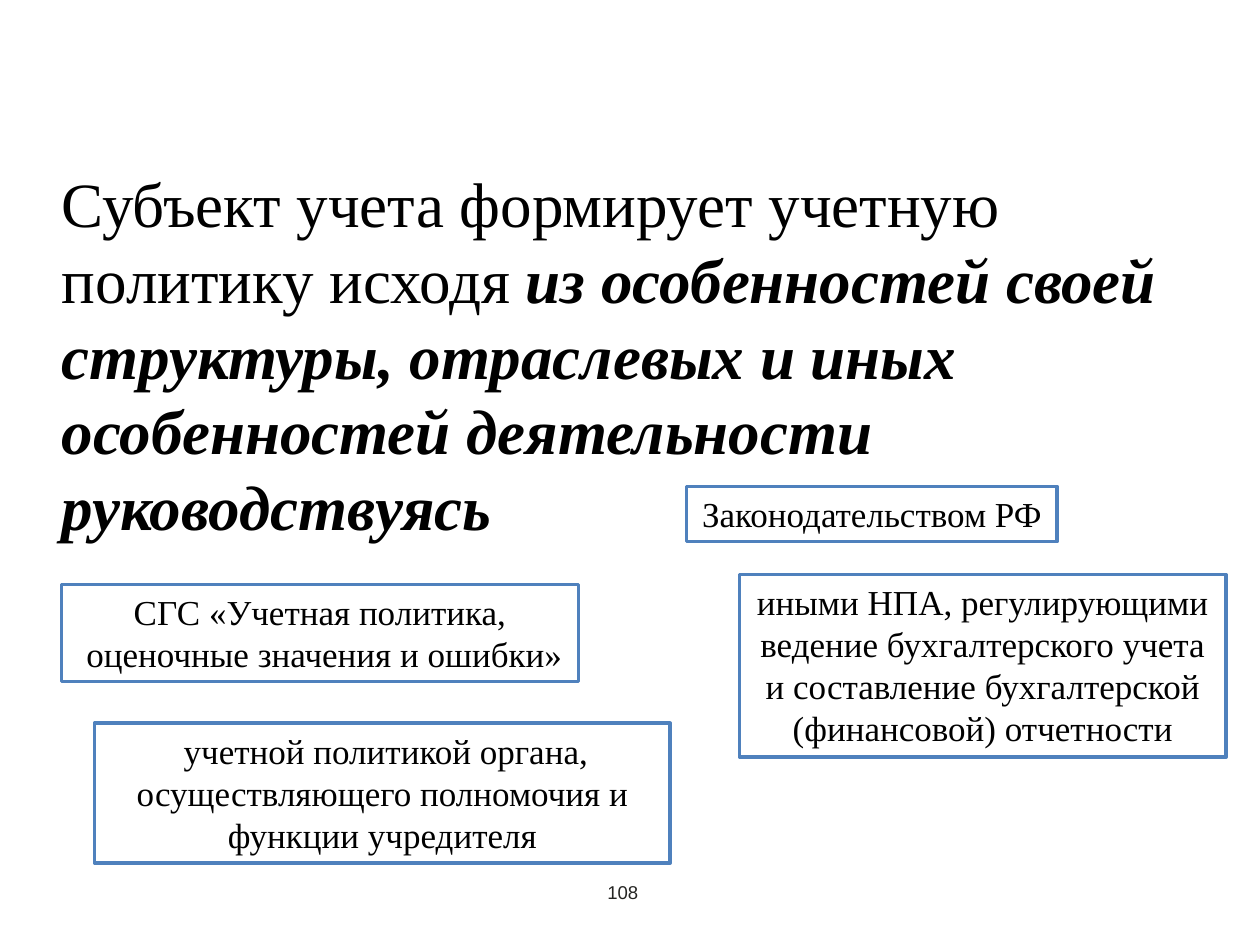
from pptx import Presentation
from pptx.dml.color import RGBColor
from pptx.enum.shapes import MSO_SHAPE
from pptx.enum.text import MSO_ANCHOR, MSO_AUTO_SIZE, PP_ALIGN
from pptx.util import Inches, Pt

RECTANGLE = MSO_SHAPE.RECTANGLE
TOP = MSO_ANCHOR.TOP
GROW = MSO_AUTO_SIZE.SHAPE_TO_FIT_TEXT
CENTER, LEFT = PP_ALIGN.CENTER, PP_ALIGN.LEFT

BLACK = RGBColor(0x00, 0x00, 0x00)
WHITE = RGBColor(0xFF, 0xFF, 0xFF)
BLUE = RGBColor(0x4F, 0x81, 0xBD)
DARK_GRAY = RGBColor(0x25, 0x25, 0x23)

SERIF = {"name": "Times New Roman", "color": BLACK}
PLAIN = {**SERIF, "size": Pt(36)}
EMPHASIS = {**PLAIN, "bold": True, "italic": True}
SMALL = {**SERIF, "size": Pt(16)}
BOX_TEXT = {**SERIF, "size": Pt(20)}
PAGE_TEXT = {"name": "Arial", "color": DARK_GRAY, "size": Pt(10.6)}


def add_run(paragraph, text, style):
    run = paragraph.add_run()
    run.text = text
    for attribute, value in style.items():
        if attribute == "color":
            run.font.color.rgb = value
        else:
            setattr(run.font, attribute, value)


def set_frame(shape, margin=None, wrap=True):
    frame = shape.text_frame
    settings = {"word_wrap": wrap, "auto_size": GROW, "vertical_anchor": TOP}
    if margin is not None:
        for side in ("left", "top", "right", "bottom"):
            settings[f"margin_{side}"] = margin
    for attribute, value in settings.items():
        setattr(frame, attribute, value)
    return frame


prs = Presentation()
prs.slide_width, prs.slide_height = Inches(10), Inches(7.5)
slide = prs.slides.add_slide(prs.slide_layouts[6])

# Main statement
statement = set_frame(
    slide.shapes.add_textbox(Inches(0.49), Inches(1.31), Inches(9.53), Inches(3.03)),
    margin=0,
)
for text, style in [
    ("Субъект учета формирует учетную политику исходя ", PLAIN),
    ("из особенностей своей структуры, отраслевых и иных особенностей деятельности", EMPHASIS),
    (" ", SMALL),
    ("руководствуясь", EMPHASIS),
]:
    add_run(statement.paragraphs[0], text, style)

# Boxes with the governing documents: position, wrapping, paragraphs of runs
documents = [
    ((0.75, 5.74, 4.57, 1.11), True, [[
        (" ", SMALL),
        ("учетной политикой органа, осуществляющего полномочия и функции учредителя", BOX_TEXT),
    ]]),
    ((5.45, 3.86, 2.94, 0.44), True, [[("Законодательством РФ", BOX_TEXT)]]),
    ((0.49, 4.64, 4.1, 0.77), False, [
        [("СГС «Учетная политика,", BOX_TEXT)],
        [(" оценочные значения и ошибки»", BOX_TEXT)],
    ]),
    ((5.87, 4.56, 3.86, 1.45), True, [[
        ("иными НПА, регулирующими ведение бухгалтерского учета и составление "
         "бухгалтерской (финансовой) отчетности", BOX_TEXT),
    ]]),
]
for position, wrap, paragraphs in documents:
    box = slide.shapes.add_shape(RECTANGLE, *map(Inches, position))
    box.shadow.inherit = False
    box.fill.solid()
    box.fill.fore_color.rgb = WHITE
    box.line.color.rgb = BLUE
    box.line.width = Pt(2)
    frame = set_frame(box, wrap=wrap)
    for index, runs in enumerate(paragraphs):
        paragraph = frame.add_paragraph() if index else frame.paragraphs[0]
        paragraph.alignment = CENTER
        for text, style in runs:
            add_run(paragraph, text, style)

# Page number, indented to the middle of the slide
page_number = set_frame(
    slide.shapes.add_textbox(Inches(0.08), Inches(7.01), Inches(5.16), Inches(0.17)),
    margin=0,
).paragraphs[0]
page_number.alignment = LEFT
page_number.line_spacing = Pt(11.6)
page_number._p.get_or_add_pPr().set("marL", str(Inches(4.74)))
add_run(page_number, "108", PAGE_TEXT)

prs.save("out.pptx")
